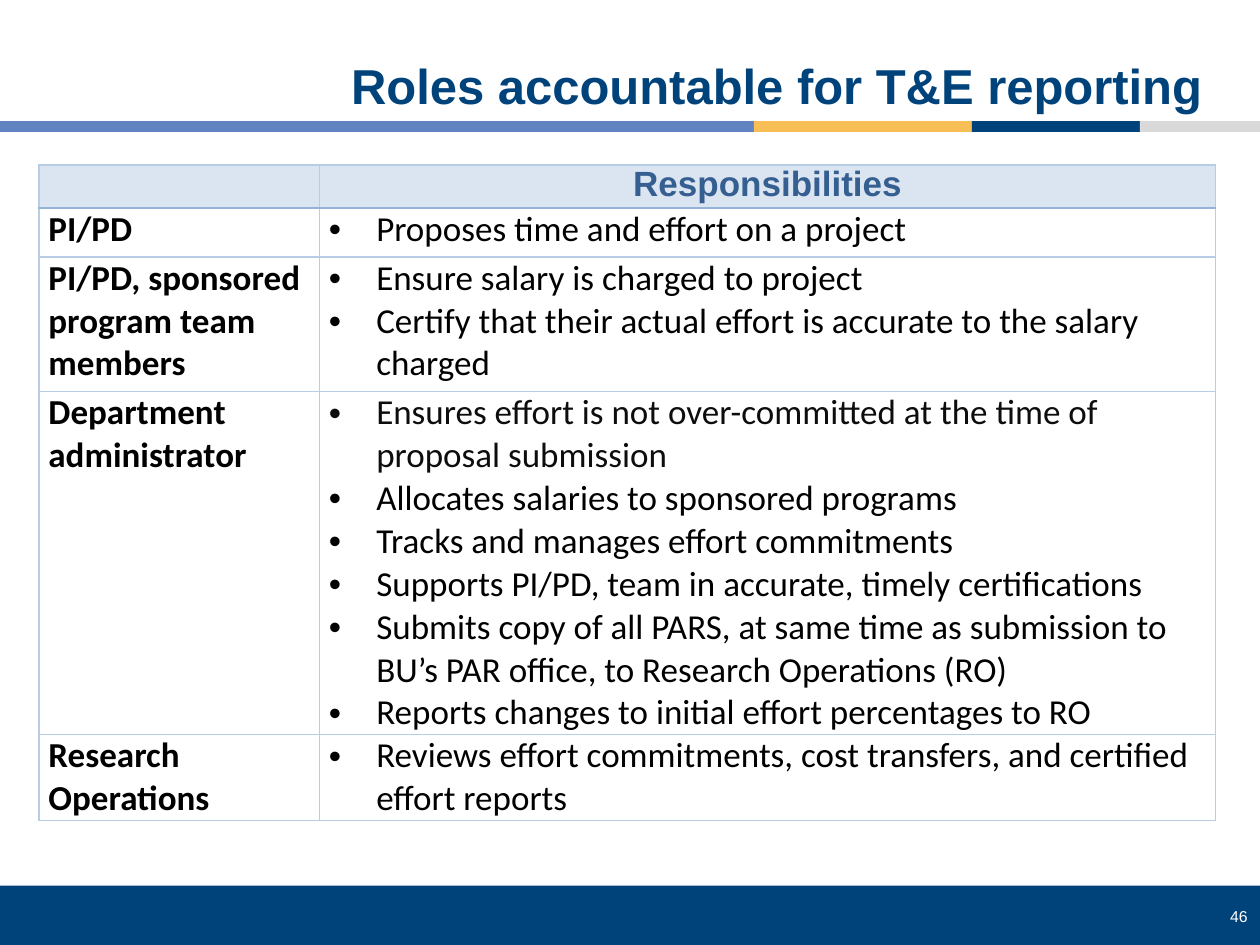
from lxml import etree
from pptx import Presentation
from pptx.dml.color import RGBColor
from pptx.enum.shapes import MSO_SHAPE
from pptx.enum.text import MSO_ANCHOR, PP_ALIGN
from pptx.oxml.ns import qn
from pptx.util import Pt

RECTANGLE = MSO_SHAPE.RECTANGLE
LEFT, CENTER, RIGHT = PP_ALIGN.LEFT, PP_ALIGN.CENTER, PP_ALIGN.RIGHT
TOP, MIDDLE = MSO_ANCHOR.TOP, MSO_ANCHOR.MIDDLE

COLORS = {
    "navy": "00437B",
    "blue": "6283C2",
    "gold": "F8BF56",
    "gray": "D9D9D9",
    "white": "FFFFFF",
    "black": "000000",
    "soft_black": "0D0D0D",
    "header_fill": "DBE5F1",
    "header_text": "365F91",
    "header_rule": "95B3D7",
    "grid": "B8CCE4",
}

STRIPE_TOP, STRIPE_HEIGHT = 69.2, 6.2
STRIPES = [
    (0, 430.8, "blue"),
    (430.8, 124.6, "gold"),
    (555.4, 96, "navy"),
    (651.4, 68.6, "gray"),
]

COLUMN_WIDTHS = [160.3, 512]
ROW_HEIGHTS = [24.5, 28, 77, 196, 49]
ROLES = [
    ("PI/PD", ["Proposes time and effort on a project"]),
    ("PI/PD, sponsored program team members", [
        "Ensure salary is charged to project",
        "Certify that their actual effort is accurate to the salary charged",
    ]),
    ("Department administrator", [
        "Ensures effort is not over-committed at the time of proposal submission",
        "Allocates salaries to sponsored programs",
        "Tracks and manages effort commitments",
        "Supports PI/PD, team in accurate, timely certifications",
        "Submits copy of all PARS, at same time as submission to BU’s PAR office, "
        "to Research Operations (RO)",
        "Reports changes to initial effort percentages to RO",
    ]),
    ("Research Operations", [
        "Reviews effort commitments, cost transfers, and certified effort reports",
    ]),
]
SOFT_DUTY = ROLES[2][1][0]


def rgb(color):
    return RGBColor.from_string(COLORS[color])


def add_run(paragraph, text, size, color, bold=False, font="Calibri"):
    run = paragraph.add_run()
    run.text = text
    run.font.name = font
    run.font.size = Pt(size)
    run.font.bold = bold
    run.font.color.rgb = rgb(color)


def add_band(slide, left, top, width, height, color):
    band = slide.shapes.add_shape(RECTANGLE, Pt(left), Pt(top), Pt(width), Pt(height))
    band.shadow.inherit = False
    band.fill.solid()
    band.fill.fore_color.rgb = rgb(color)
    band.line.fill.background()


def add_label(slide, left, top, width, height, text, size, color, bold, anchor, spacing):
    frame = slide.shapes.add_textbox(Pt(left), Pt(top), Pt(width), Pt(height)).text_frame
    frame.word_wrap = True
    frame.vertical_anchor = anchor
    paragraph = frame.paragraphs[0]
    paragraph.alignment = RIGHT
    paragraph.line_spacing = spacing
    add_run(paragraph, text, size, color, bold, "Arial")


def add_bullet(paragraph):
    properties = paragraph._p.get_or_add_pPr()
    properties.set("marL", str(Pt(27)))
    properties.set("indent", str(Pt(-27)))
    etree.SubElement(properties, qn("a:buFont"), typeface="Arial")
    etree.SubElement(properties, qn("a:buChar"), char="•")


def set_borders(cell, top, bottom):
    properties = cell._tc.get_or_add_tcPr()
    sides = {"lnL": "grid", "lnR": "grid", "lnT": top, "lnB": bottom}
    for position, (side, color) in enumerate(sides.items()):
        width = 1.5 if color == "header_rule" else 1
        line = etree.Element(qn(f"a:{side}"), w=str(Pt(width)))
        fill = etree.SubElement(line, qn("a:solidFill"))
        etree.SubElement(fill, qn("a:srgbClr"), val=COLORS[color])
        properties.insert(position, line)


def format_cell(cell, row):
    cell.margin_left = cell.margin_right = Pt(5.4)
    cell.margin_top = cell.margin_bottom = 0
    if row == 0:
        cell.fill.solid()
        cell.fill.fore_color.rgb = rgb("header_fill")
    else:
        cell.fill.background()
    set_borders(cell, "header_rule" if row == 1 else "grid",
                "header_rule" if row == 0 else "grid")


def add_duties(cell, duties):
    frame = cell.text_frame
    for index, duty in enumerate(duties):
        paragraph = frame.add_paragraph() if index else frame.paragraphs[0]
        paragraph.alignment = LEFT
        add_bullet(paragraph)
        add_run(paragraph, duty, 20, "soft_black" if duty == SOFT_DUTY else "black")


def add_roles_table(slide):
    table = slide.shapes.add_table(
        len(ROW_HEIGHTS), len(COLUMN_WIDTHS), Pt(22.3), Pt(94.3),
        Pt(sum(COLUMN_WIDTHS)), Pt(sum(ROW_HEIGHTS))).table
    table.first_row = table.horz_banding = False
    for column, width in zip(table.columns, COLUMN_WIDTHS):
        column.width = Pt(width)
    for index, height in enumerate(ROW_HEIGHTS):
        table.rows[index].height = Pt(height)
        for cell in table.rows[index].cells:
            format_cell(cell, index)

    heading = table.cell(0, 1).text_frame.paragraphs[0]
    heading.alignment = CENTER
    add_run(heading, "Responsibilities", 20, "header_text", True, "Arial")
    for row, (role, duties) in enumerate(ROLES, start=1):
        add_run(table.cell(row, 0).text_frame.paragraphs[0], role, 20, "black", True)
        add_duties(table.cell(row, 1), duties)


def main():
    presentation = Presentation()
    presentation.slide_width, presentation.slide_height = Pt(720), Pt(540)
    slide = presentation.slides.add_slide(presentation.slide_layouts[6])

    add_band(slide, 0, 506, 720, 34, "navy")
    add_label(slide, 670.3, 514.8, 49.7, 18, "46", 9, "white", False, TOP, 1.0)
    for left, width, color in STRIPES:
        add_band(slide, left, STRIPE_TOP, width, STRIPE_HEIGHT, color)
    add_label(slide, 5, 25.9, 689, 49.7, "Roles accountable for T&E reporting",
              28, "navy", True, MIDDLE, 0.9)
    add_roles_table(slide)
    presentation.save("out.pptx")


if __name__ == "__main__":
    main()
